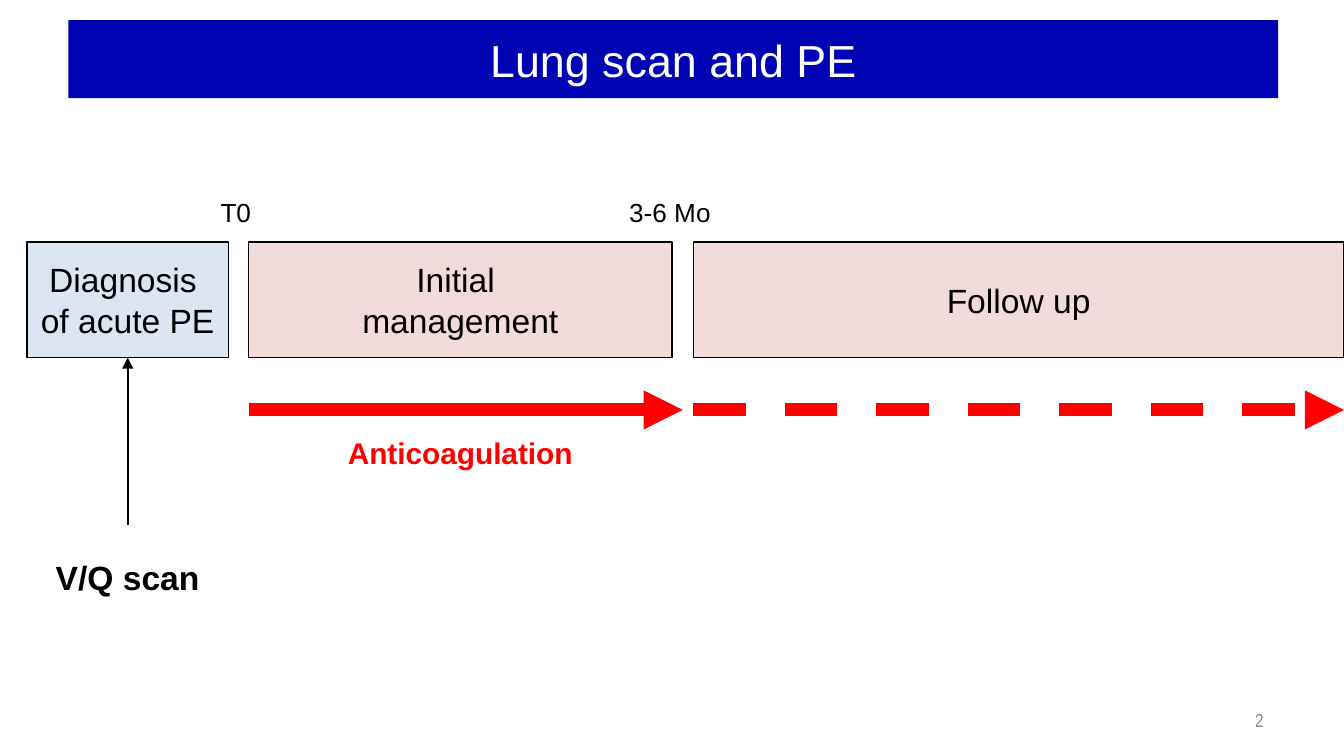
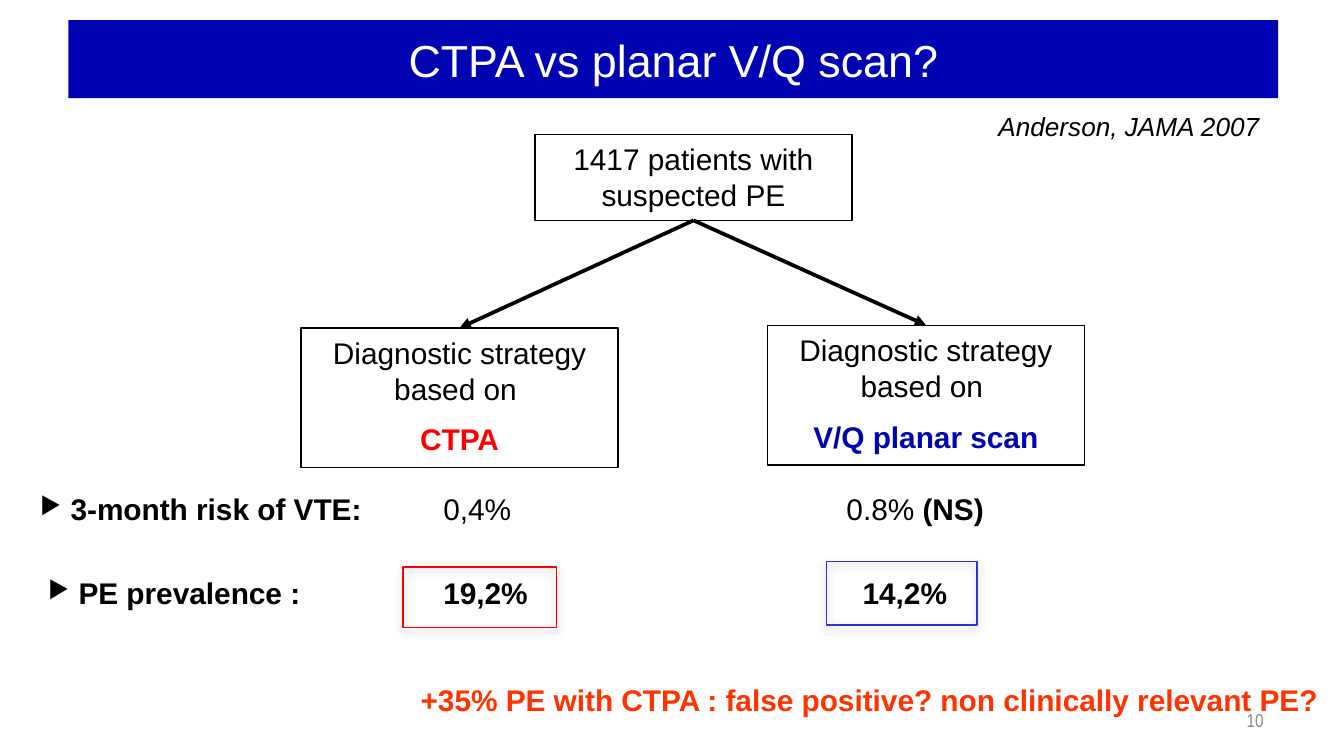
from lxml.etree import SubElement
from pptx import Presentation
from pptx.dml.color import RGBColor
from pptx.enum.dml import MSO_LINE
from pptx.enum.shapes import MSO_CONNECTOR, MSO_SHAPE
from pptx.enum.text import MSO_ANCHOR, PP_ALIGN
from pptx.oxml.ns import qn
from pptx.util import Inches, Pt

COLORS = {
    "black": "000000", "white": "FFFFFF", "navy": "0003B1", "grey": "898989",
    "sky": "DCE6F2", "rose": "F2DCDB", "red": "FF0000", "blue": "3333CC",
    "orange": "FF3300",
}
TOP, BOTTOM = 0, 2

# Timeline: text, left, width, fill
PHASE_TOP, PHASE_HEIGHT = 1.8, 0.86
PHASES = [
    ("Diagnosis \nof acute PE", 0.2, 1.5, "sky"),
    ("Initial \nmanagement", 1.85, 3.15, "rose"),
    ("Follow up", 5.16, 4.84, "rose"),
]
MILESTONES = [("T0", 1.54, 0.43), ("3-6 Mo", 4.58, 0.81)]
TREATMENT_Y = 3.05
TREATMENT = [(1.85, 5.08, None), (5.16, 10, MSO_LINE.DASH)]

# Comparison: method, colour, left, top
STRATEGIES = [
    ("CTPA", "red", 2.24, 2.44),
    ("V/Q planar scan", "navy", 5.71, 2.42),
]
# Runs of each finding, left margin and tab stops
FINDINGS = [
    ([(" 3-month risk of VTE: \t", {}), ("0,4% \t0.8%", {"bold": False}), (" (NS)", {})],
     0, (3.0, 6.0)),
    ([(" PE prevalence : \t19,2% \t14,2%", {})], 0.06, (3.0, 6.12)),
]
PREVALENCE_FRAMES = [((3, 4.22, 1.14, 0.45), "red"), ((6.15, 4.18, 1.12, 0.47), "blue")]


def rgb(name):
    return RGBColor.from_string(COLORS[name])


def write(shape, text, size=16, color="black", font="Arial", bold=False, italic=False,
          align=PP_ALIGN.CENTER, anchor=MSO_ANCHOR.TOP, wrap=True, spacing=None, before=0):
    """Fill a shape; text is a string or a list of paragraphs made of (text, changes) runs."""
    if isinstance(text, str):
        text = [[(line, {})] for line in text.split("\n")]
    frame = shape.text_frame
    frame.word_wrap = wrap
    frame.vertical_anchor = anchor
    for index, runs in enumerate(text):
        paragraph = frame.add_paragraph() if index else frame.paragraphs[0]
        paragraph.alignment = align
        if spacing:
            paragraph.line_spacing = spacing
        if index and before:
            paragraph.space_before = Pt(before)
        for words, changes in runs:
            run = paragraph.add_run()
            run.text = words
            run.font.name = font
            run.font.size = Pt(size)
            run.font.bold = changes.get("bold", bold)
            run.font.italic = italic
            run.font.color.rgb = rgb(changes.get("color", color))
    return shape


def add_label(slide, text, box, **style):
    return write(slide.shapes.add_textbox(*map(Inches, box)), text, **style)


def add_box(slide, box, fill=None, line="black"):
    shape = slide.shapes.add_shape(MSO_SHAPE.RECTANGLE, *map(Inches, box))
    shape.shadow.inherit = False
    if fill:
        shape.fill.solid()
        shape.fill.fore_color.rgb = rgb(fill)
    else:
        shape.fill.background()
    if line:
        shape.line.color.rgb = rgb(line)
        shape.line.width = Pt(0.75)
    else:
        shape.line.fill.background()
    return shape


def cast_shadow(shape, blur, distance, opacity):
    """Add a black shadow that falls straight down."""
    effects = shape._element.spPr.find(qn("a:effectLst"))
    shadow = SubElement(effects, qn("a:outerShdw"), blurRad=str(Pt(blur)),
                        dist=str(Pt(distance)), dir="5400000", rotWithShape="0")
    black = SubElement(shadow, qn("a:srgbClr"), val=COLORS["black"])
    SubElement(black, qn("a:alpha"), val=str(opacity * 1000))


def add_arrow(slide, start=(0, 0), end=(0, 0), color="black", width=2.0, dash=None,
              source=None, target=None):
    """Draw an arrow between points, or from a source's bottom or top to a target."""
    arrow = slide.shapes.add_connector(MSO_CONNECTOR.STRAIGHT, *map(Inches, (*start, *end)))
    if source is not None and target is not None:
        downward = source.top < target.top
        arrow.begin_connect(source, BOTTOM if downward else TOP)
        arrow.end_connect(target, TOP if downward else BOTTOM)
    arrow.line.color.rgb = rgb(color)
    arrow.line.width = Pt(width)
    if dash:
        arrow.line.dash_style = dash
    SubElement(arrow.line._get_or_add_ln(), qn("a:tailEnd"), type="triangle")
    SubElement(arrow._element.spPr, qn("a:effectLst"))


def add_bullet(paragraph, margin, tabs):
    properties = paragraph._p.get_or_add_pPr()
    properties.set("marL", str(Inches(margin)))
    properties.set("indent", "0")
    color = SubElement(properties, qn("a:buClr"))
    SubElement(color, qn("a:srgbClr"), val=COLORS["black"])
    SubElement(properties, qn("a:buSzPct"), val="80000")
    SubElement(properties, qn("a:buChar"), char="▶")
    stops = SubElement(properties, qn("a:tabLst"))
    for position in tabs:
        SubElement(stops, qn("a:tab"), pos=str(Inches(position)), algn="l")


def add_slide(deck, title, number):
    slide = deck.slides.add_slide(deck.slide_layouts[6])
    band = add_box(slide, (0.51, 0.15, 9, 0.58), fill="navy", line=None)
    write(band, title, size=24, color="white", anchor=MSO_ANCHOR.MIDDLE)
    add_label(slide, number, (8.94, 5.21, 0.56, 0.3), size=10, color="grey",
              font="Arial Narrow", align=PP_ALIGN.RIGHT, anchor=MSO_ANCHOR.MIDDLE)
    return slide


def build_timeline(deck):
    slide = add_slide(deck, "Lung scan and PE", "2")
    phases = [
        write(add_box(slide, (left, PHASE_TOP, width, PHASE_HEIGHT), fill=fill), text,
              size=18, anchor=MSO_ANCHOR.MIDDLE, wrap=False)
        for text, left, width, fill in PHASES
    ]
    for text, left, width in MILESTONES:
        add_label(slide, text, (left, 1.41, width, 0.34), size=14, wrap=False)
    for start, end, dash in TREATMENT:
        add_arrow(slide, (start, TREATMENT_Y), (end, TREATMENT_Y), color="red", width=7,
                  dash=dash)
    add_label(slide, "Anticoagulation", (2.48, TREATMENT_Y, 1.89, 0.45), color="red",
              bold=True, spacing=1.5)
    scan = add_label(slide, "V/Q scan", (0.28, 3.91, 1.34, 0.62), size=18, bold=True,
                     anchor=MSO_ANCHOR.MIDDLE, spacing=1.5)
    add_arrow(slide, source=scan, target=phases[0], width=1.25)


def build_comparison(deck):
    slide = add_slide(deck, "CTPA vs planar V/Q scan?", "10")
    add_label(slide, "Anderson, JAMA 2007", (7.33, 0.77, 2.15, 0.34), size=14, italic=True,
              align=PP_ALIGN.LEFT, wrap=False)

    findings = add_label(slide, [], (0.2, 3.28, 7.64, 1.42))
    findings.text_frame.margin_top = Inches(0.37)
    write(findings, [runs for runs, _, _ in FINDINGS], bold=True, align=PP_ALIGN.LEFT)
    for paragraph, (_, margin, tabs) in zip(findings.text_frame.paragraphs, FINDINGS):
        add_bullet(paragraph, margin, tabs)
    findings.text_frame.paragraphs[1].space_before = Pt(26)

    for box, color in PREVALENCE_FRAMES:
        cast_shadow(add_box(slide, box, line=color), 5, 1.8, 35)
    add_label(slide, "+35% PE with CTPA : false positive? non clinically relevant PE?",
              (2.97, 5.02, 7.06, 0.37), color="orange", bold=True, align=PP_ALIGN.LEFT,
              wrap=False).text_frame.margin_left = Inches(0.16)

    patients = write(add_box(slide, (3.98, 1, 2.36, 0.64)), "1417 patients with suspected PE")
    for method, color, left, top in STRATEGIES:
        strategy = add_box(slide, (left, top, 2.36, 1.04))
        write(strategy, [[("Diagnostic strategy based on ", {})],
                         [(method, {"color": color, "bold": True})]], before=8)
        add_arrow(slide, source=patients, target=strategy)


def main():
    deck = Presentation()
    deck.slide_width = Inches(10)
    deck.slide_height = deck.slide_width * 9 // 16
    build_timeline(deck)
    build_comparison(deck)
    deck.save("out.pptx")


if __name__ == "__main__":
    main()
